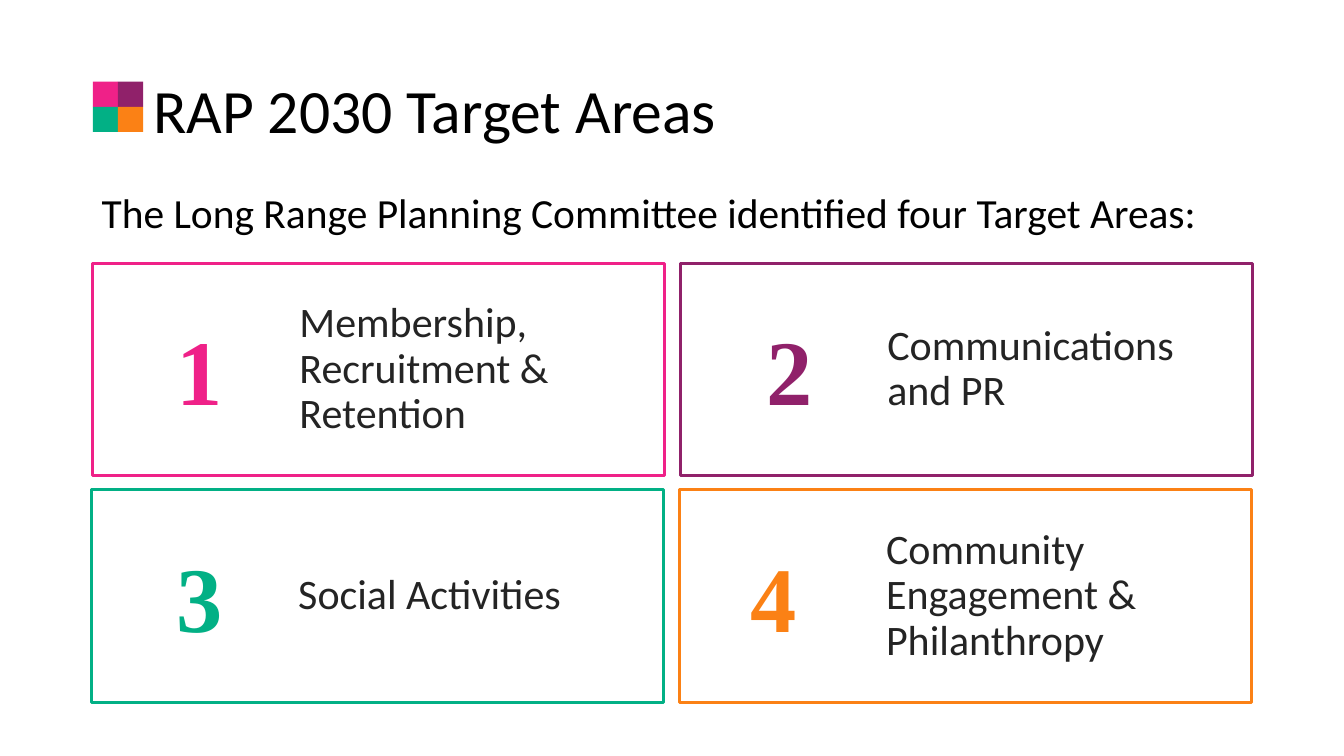
import pptx
import pptx.dml.color
import pptx.enum.shapes
import pptx.enum.text
import pptx.oxml
import pptx.util
from pptx.util import Inches

PINK, PURPLE, GREEN, ORANGE = "EF2188", "90216A", "02B085", "FB8115"
RECTANGLE = pptx.enum.shapes.MSO_SHAPE.RECTANGLE
ANCHOR = pptx.enum.text.MSO_ANCHOR
ALIGN = pptx.enum.text.PP_ALIGN

TARGET_AREAS = [
    ("1", "Membership, Recruitment & Retention", PINK, 0.92, 1.49),
    ("2", "Communications\vand PR", PURPLE, 6.75, 7.34),
    ("3", "Social Activities", GREEN, 0.91, 1.49),
    ("4", "Community Engagement & Philanthropy", ORANGE, 6.74, 7.18),
]
CARD_TOP, ROW_STEP = 2.61, 2.25
CARD_WIDTH, CARD_HEIGHT = 5.67, 2.11
TILE = 0.25


def rgb(colour):
    return pptx.dml.color.RGBColor.from_string(colour)


def place(shape, left, top, width, height):
    shape.left, shape.top = Inches(left), Inches(top)
    shape.width, shape.height = Inches(width), Inches(height)


def write(shape, text, size, colour, font="Calibri", bold=False,
          align=ALIGN.LEFT, anchor=ANCHOR.TOP, spacing=1.0, before=0):
    frame = shape.text_frame
    frame.word_wrap = True
    frame.auto_size = pptx.enum.text.MSO_AUTO_SIZE.NONE
    frame.vertical_anchor = anchor
    frame.text = text
    paragraph = frame.paragraphs[0]
    paragraph.alignment = align
    paragraph.line_spacing = spacing
    paragraph.space_before = pptx.util.Pt(before)
    paragraph.font.name = font
    paragraph.font.size = pptx.util.Pt(size)
    paragraph.font.bold = bold
    paragraph.font.color.rgb = rgb(colour)
    return paragraph


def add_rectangle(shapes, left, top, width, height):
    rectangle = shapes.add_shape(
        RECTANGLE, Inches(left), Inches(top), Inches(width), Inches(height))
    rectangle.shadow.inherit = False
    return rectangle


def add_text(slide, box, text, size, colour, **style):
    label = slide.shapes.add_textbox(*map(Inches, box))
    write(label, text, size, colour, **style)


def format_card(card, area, colour):
    card.fill.background()
    card.line.color.rgb = rgb(colour)
    card.line.width = pptx.util.Pt(2.25)
    paragraph = write(card, area, 30, "242424", anchor=ANCHOR.MIDDLE,
                      spacing=0.9, before=10)
    properties = paragraph._p.get_or_add_pPr()
    properties.set("marL", str(Inches(1.95)))
    properties.set("indent", "0")
    pptx.oxml.ns.qn("a:buNone")
    properties.insert_element_before(
        pptx.oxml.parse_xml(
            '<a:buNone xmlns:a="http://schemas.openxmlformats.org/drawingml/2006/main"/>'),
        "a:tabLst", "a:defRPr", "a:extLst")


def add_target_areas(slide):
    bodies = list(slide.placeholders)[1:3]
    for index, (number, area, colour, left, number_left) in enumerate(TARGET_AREAS):
        row = index // 2
        box = (left, CARD_TOP + row * ROW_STEP, CARD_WIDTH, CARD_HEIGHT)
        if row == 0:
            card = bodies[index]
            place(card, *box)
        else:
            card = add_rectangle(slide.shapes, *box)
        format_card(card, area, colour)
        add_text(slide, (number_left, 3.06 + row * ROW_STEP, 0.98, 1.21),
                 number, 66, colour, font="Times New Roman", bold=True,
                 align=ALIGN.CENTER)


def add_emblem(slide):
    emblem = slide.shapes.add_group_shape()
    for index, colour in enumerate((PINK, PURPLE, GREEN, ORANGE)):
        row, column = divmod(index, 2)
        tile = add_rectangle(emblem.shapes, 0.92 + column * TILE,
                             0.81 + row * TILE, TILE, TILE)
        tile.fill.solid()
        tile.fill.fore_color.rgb = rgb(colour)
        tile.line.fill.background()


def main():
    presentation = pptx.Presentation()
    presentation.slide_width = Inches(13.33)
    presentation.slide_height = Inches(7.5)
    slide = presentation.slides.add_slide(presentation.slide_layouts[3])
    for placeholder in list(slide.placeholders)[3:]:
        placeholder.element.getparent().remove(placeholder.element)

    title = slide.shapes.title
    place(title, 1.42, 0.4, 11, 1.45)
    write(title, "RAP 2030 Target Areas", 44, "000000",
          anchor=ANCHOR.MIDDLE, spacing=0.9)
    add_target_areas(slide)
    add_text(slide, (0.91, 1.86, 11.5, 0.92),
             "The Long Range Planning Committee identified four Target Areas:",
             29.6, "000000", spacing=0.9, before=10)
    add_emblem(slide)
    presentation.save("out.pptx")


if __name__ == "__main__":
    main()
